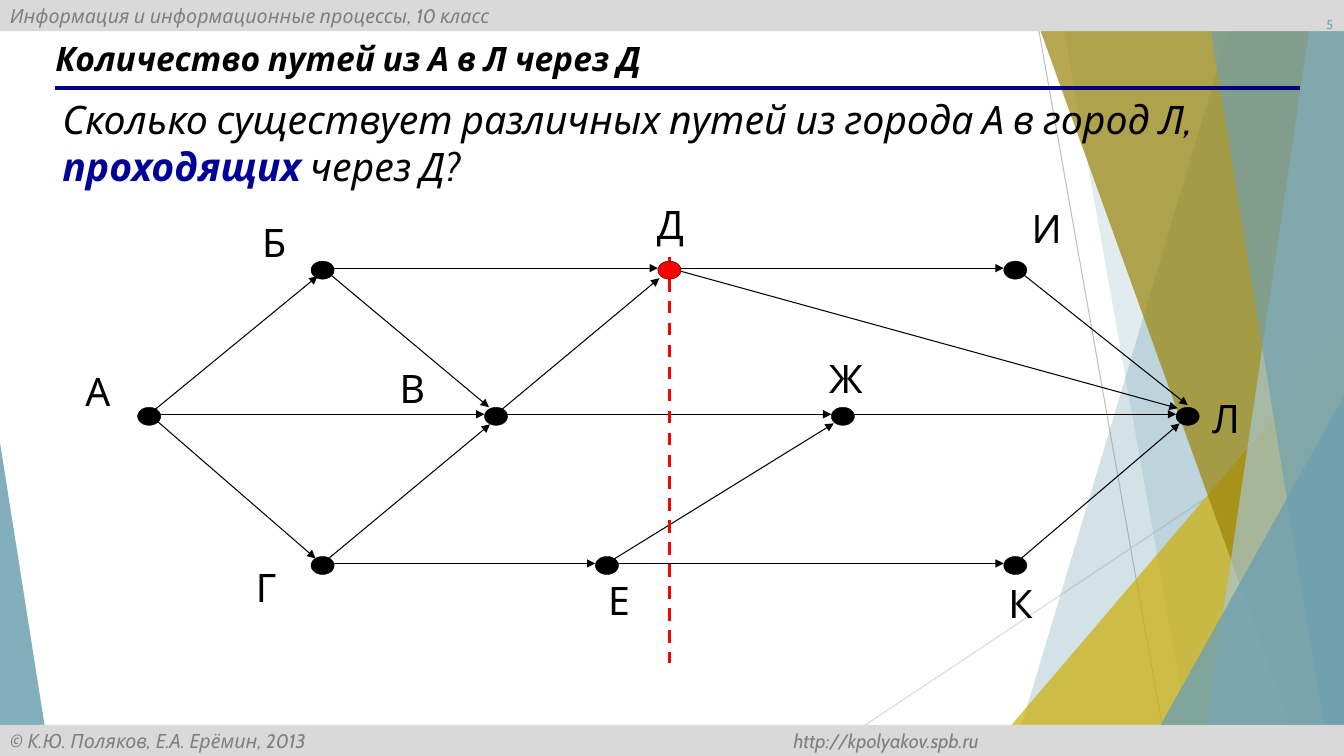
import pptx
import pptx.util
import pptx.dml.color
import pptx.enum.dml
import pptx.enum.shapes
import pptx.enum.text
import pptx.oxml
import pptx.oxml.ns

Inches, Pt = pptx.util.Inches, pptx.util.Pt
SHAPE = pptx.enum.shapes.MSO_SHAPE
ANCHOR = pptx.enum.text.MSO_ANCHOR
ALIGN = pptx.enum.text.PP_ALIGN
FONT = "Cabin"
W, H, BAND = 13.33, 7.5, 0.31
DOT_W, DOT_H = 0.23, 0.18

NODES = {  # centre of the dot, then left and top of the label
    "А": (1.48, 4.13, 0.58, 3.64), "Б": (3.2, 2.68, 2.33, 2.17),
    "В": (4.92, 4.13, 3.7, 3.61), "Г": (3.2, 5.61, 2.25, 5.59),
    "Д": (6.64, 2.68, 6.26, 1.99), "Е": (6.02, 5.61, 5.75, 5.72),
    "Ж": (8.36, 4.13, 8, 3.51), "И": (10.07, 2.68, 9.99, 2.03),
    "К": (10.07, 5.61, 9.73, 5.75), "Л": (11.78, 4.13, 11.77, 3.91),
}
LEVEL_ROADS = ["АВ", "БД", "ВЖ", "ГЕ", "ДИ", "ЕК", "ЖЛ"]
SLANTED_ROADS = {  # arrow tip relative to the centre of the target
    "АБ": (-0.05, 0.06), "АГ": (-0.07, -0.07), "БВ": (-0.07, -0.09),
    "ГВ": (-0.06, 0.08), "ВД": (-0.1, 0.08), "ЕЖ": (-0.09, 0.07),
    "ДЛ": (-0.1, -0.08), "ИЛ": (0, -0.11), "КЛ": (-0.08, 0.07),
}


def rgb(color):
    """Return the colour for a hex string."""
    return pptx.dml.color.RGBColor.from_string(color)


def add_xml(parent, xml):
    """Append a drawing element, written without its namespace, to parent."""
    name, rest = xml[1:].split(" ", 1)
    ns = pptx.oxml.ns.nsdecls("a")
    parent.append(pptx.oxml.parse_xml(f"<a:{name} {ns} {rest}"))


def paint(sp, color, alpha=100, line=None):
    """Fill a shape, with optional transparency and thin outline."""
    sp.shadow.inherit = False
    sp.fill.solid()
    sp.fill.fore_color.rgb = rgb(color)
    if alpha < 100:
        clr = sp._element.spPr.find(".//" + pptx.oxml.ns.qn("a:srgbClr"))
        add_xml(clr, f'<alpha val="{alpha * 1000}"/>')
    if line:
        sp.line.color.rgb = rgb(line)
        sp.line.width = Pt(0.25)
    else:
        sp.line.fill.background()


def add_line(s, start, end, color, width, arrow=False, dash=False):
    """Draw a straight line, optionally dashed or with an arrowhead."""
    line = s.shapes.add_connector(
        pptx.enum.shapes.MSO_CONNECTOR.STRAIGHT, *map(Inches, start + end))
    line.line.color.rgb = rgb(color)
    line.line.width = Pt(width)
    if dash:
        line.line.dash_style = pptx.enum.dml.MSO_LINE.DASH
    if arrow:
        add_xml(line.line._get_or_add_ln(), '<tailEnd type="triangle" w="med" len="med"/>')
    add_xml(line._element.spPr, "<effectLst />")


def format_run(r, size, color, bold=False, italic=False):
    """Set the font of a run."""
    r.font.name, r.font.size = FONT, Pt(size)
    r.font.bold, r.font.italic = bold, italic
    r.font.color.rgb = rgb(color)


def add_text(s, box, text, size, color, align=ALIGN.LEFT, inset=True):
    """Add a wrapping one-paragraph text box and return it."""
    sp = s.shapes.add_textbox(*map(Inches, box))
    tf = sp.text_frame
    tf.word_wrap = True
    if not inset:
        tf.margin_left = tf.margin_right = tf.margin_top = tf.margin_bottom = 0
    tf.text = text
    tf.paragraphs[0].alignment = align
    format_run(tf.paragraphs[0].runs[0], size, color)
    return sp


def add_facet(s, top_x, bottom_x, color, alpha):
    """Draw a pane between a slanted left edge and the slide's right edge."""
    corners = [(top_x, 0), (W, 0), (W, H), (bottom_x, H)]
    points = [(Inches(x), Inches(y)) for x, y in corners]
    fb = s.shapes.build_freeform(*points[0], scale=1.0)
    fb.add_line_segments(points[1:], close=True)
    paint(fb.convert_to_shape(), color, alpha)


def add_wedge(s, box, apex, color, alpha):
    """Draw a triangle with its apex at the given share of the width."""
    sp = s.shapes.add_shape(SHAPE.ISOSCELES_TRIANGLE, *map(Inches, box))
    sp.adjustments[0] = apex
    paint(sp, color, alpha)


def add_backdrop(s):
    """Draw the coloured panes at the sides of the slide."""
    add_line(s, (10.25, 0), (11.58, H), "BFBFBF", 0.75)
    add_line(s, (W, 4.03), (8.12, H), "D9D9D9", 0.75)
    add_facet(s, 12.28, 10.04, "6EA0B0", 30)
    add_facet(s, 10.5, 11.83, "6EA0B0", 20)
    add_wedge(s, (9.77, 3.33, 3.56, 4.17), 1, "CCAF0A", 72)
    add_facet(s, 10.21, 12.91, "998307", 70)
    add_facet(s, 13.03, 11.92, "A8C6D0", 70)
    add_facet(s, 11.96, 13.18, "6EA0B0", 65)
    add_wedge(s, (11.34, 3.93, 1.99, 3.57), 1, "6EA0B0", 80)
    add_wedge(s, (0, 4.39, 0.49, 3.11), 0, "6EA0B0", 85)


def add_band(s, box, text):
    """Draw a grey band with grey italic text."""
    sp = s.shapes.add_shape(SHAPE.RECTANGLE, *map(Inches, box))
    paint(sp, "D9D9D9")
    tf = sp.text_frame
    tf.text = text
    tf.vertical_anchor = ANCHOR.MIDDLE
    p = tf.paragraphs[0]
    p.alignment = ALIGN.LEFT
    add_xml(p._p.get_or_add_pPr(),
            f'<tabLst ><a:tab pos="{Inches(9.61)}" algn="r"/></a:tabLst>')
    for r in p.runs:
        format_run(r, 14, "7F7F7F", italic=True)


def add_title(s, box, text):
    """Place the title and the rule under it."""
    sp = s.shapes.title
    sp.left, sp.top, sp.width, sp.height = map(Inches, box)
    tf = sp.text_frame
    tf.text = text
    tf.vertical_anchor = ANCHOR.TOP
    tf.paragraphs[0].alignment = ALIGN.LEFT
    format_run(tf.paragraphs[0].runs[0], 24, "000000", bold=True, italic=True)
    left, top, width, height = box
    y = top + height + 0.02
    add_line(s, (left + 0.1, y), (left + width + 0.23, y), "000080", 3)


def add_question(s, box):
    """Write the question with its key word in bold blue."""
    sp = add_text(s, box, "Сколько существует различных путей из города А в город Л, ",
                  28, "000000")
    sp.text_frame.vertical_anchor = ANCHOR.MIDDLE
    p = sp.text_frame.paragraphs[0]
    p.runs[0].font.italic = True
    for text, color, bold in [("проходящих", "000099", True), (" через Д?", "000000", False)]:
        r = p.add_run()
        r.text = text
        format_run(r, 28, color, bold=bold, italic=True)


def add_graph(s, box):
    """Draw the roads, the cut through the key town, the towns and their names."""
    left, top = box[:2]
    towns = {name: (left + x, top + y) for name, (x, y, _, _) in NODES.items()}
    roads = {road: (-DOT_W / 2, -0.02) for road in LEVEL_ROADS} | SLANTED_ROADS
    for (a, b), (dx, dy) in roads.items():
        (x1, y1), (x2, y2) = towns[a], towns[b]
        add_line(s, (x1, y1 - 0.02), (x2 + dx, y2 + dy), "000000", 0.75, arrow=True)
    x, y = towns["Д"]
    add_line(s, (x, y - 0.13), (x, y + 3.9), "FF0000", 2.25, dash=True)
    for name, (x, y) in towns.items():
        dot = s.shapes.add_shape(SHAPE.OVAL, Inches(x - DOT_W / 2), Inches(y - DOT_H / 2),
                                 Inches(DOT_W), Inches(DOT_H))
        paint(dot, "FF0000" if name == "Д" else "000000", line="000000")
        label_x, label_y = NODES[name][2:]
        add_text(s, (left + label_x, top + label_y, 0.78, 0.49), name, 28, "000000",
                 ALIGN.CENTER, inset=False)


def main():
    """Build the slide and save it."""
    prs = pptx.Presentation()
    prs.slide_width, prs.slide_height = Inches(W), Inches(H)
    s = prs.slides.add_slide(prs.slide_layouts[5])
    add_backdrop(s)
    add_band(s, (0, 0, W, BAND), "Информация и информационные процессы, 10 класс")
    add_band(s, (0, H - BAND, W, BAND),
             "© К.Ю. Поляков, Е.А. Ерёмин, 2013 \thttp://kpolyakov.spb.ru")
    add_title(s, (0.45, 0.33, 12.21, 0.52), "Количество путей из А в Л через Д")
    number = add_text(s, (10.21, -0.02, 3.11, 0.52), "5", 9, "6EA0B0", ALIGN.RIGHT)
    number.text_frame.vertical_anchor = ANCHOR.MIDDLE
    add_question(s, (0.52, 0.89, 12.37, 1.04))
    add_graph(s, (0, 0, W, H))
    prs.save("out.pptx")


if __name__ == "__main__":
    main()
